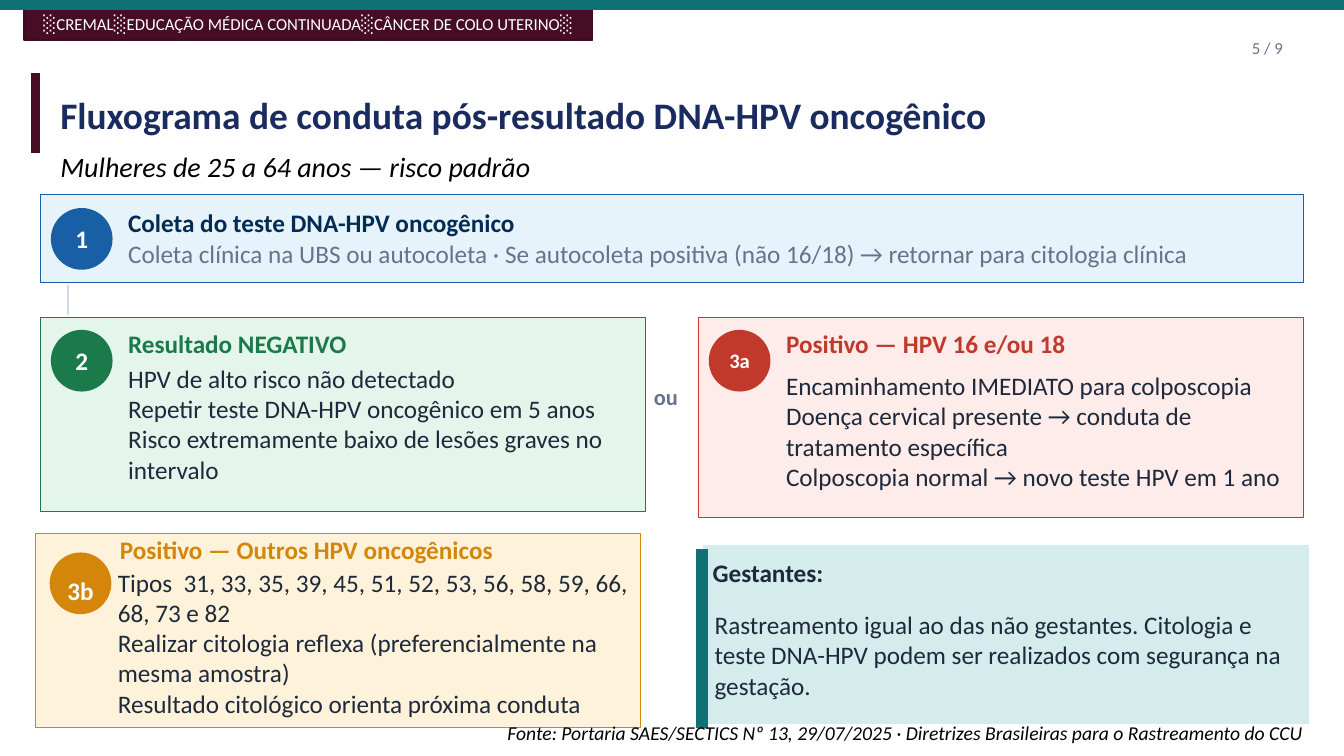
"""Build the slide with the management flowchart that follows an HPV DNA test."""
from dataclasses import dataclass

from lxml import etree
from pptx import Presentation
from pptx.dml.color import RGBColor
from pptx.enum.shapes import MSO_CONNECTOR, MSO_SHAPE
from pptx.enum.text import MSO_ANCHOR, PP_ALIGN
from pptx.oxml.ns import qn
from pptx.util import Cm, Pt


@dataclass(frozen=True)
class Theme:
    """Font, type sizes and colours of the slide."""
    font: str = "Calibri"
    title: float = 26.7
    subtitle: float = 20
    body: float = 18
    either: float = 16
    small_badge: float = 14.7
    source: float = 14
    small: float = 12
    white: str = "FFFFFF"
    black: str = "000000"
    ink: str = "1E293B"
    grey: str = "64748B"
    pale_grey: str = "D1D9E6"
    navy: str = "1A2B5F"
    deep_blue: str = "042C53"
    wine: str = "460D25"
    dark_wine: str = "3D0B20"
    teal: str = "0F7173"
    pale_teal: str = "D4ECEC"
    blue: str = "185FA5"
    pale_blue: str = "E6F3FB"
    green: str = "1A7A4A"
    pale_green: str = "E4F5EC"
    red: str = "C0392B"
    pale_red: str = "FDECEA"
    amber: str = "D4860A"
    pale_amber: str = "FEF3DA"


THEME = Theme()


@dataclass
class Step:
    """One numbered card; inner places are offsets from its top left corner."""
    label: str
    heading: str
    lines: list
    place: tuple
    colour: str
    fill: str
    body: tuple
    badge: tuple = (0.28, 0.33)
    head: tuple = (2.21, 0.2)
    heading_colour: str = ""
    body_colour: str = THEME.ink
    label_size: float = THEME.body
    label_drop: float = 0


STEPS = [
    Step("1", "Coleta do teste DNA-HPV oncogênico",
         ["Coleta clínica na UBS ou autocoleta · Se autocoleta positiva (não 16/18) "
          "→ retornar para citologia clínica"],
         (1.02, 4.9, 31.83, 2.21), THEME.blue, THEME.pale_blue, (2.21, 1.07, 28.78, 0.84),
         badge=(0.28, 0.36), head=(2.21, 0.26),
         heading_colour=THEME.deep_blue, body_colour=THEME.grey),
    Step("2", "Resultado NEGATIVO",
         ["HPV de alto risco não detectado",
          "Repetir teste DNA-HPV oncogênico em 5 anos",
          "Risco extremamente baixo de lesões graves no intervalo"],
         (1.02, 8, 15.24, 4.88), THEME.green, THEME.pale_green, (2.21, 1.86, 12.19, 1.63)),
    Step("3a", "Positivo — HPV 16 e/ou 18",
         ["Encaminhamento IMEDIATO para colposcopia",
          "Doença cervical presente → conduta de tratamento específica",
          "Colposcopia normal → novo teste HPV em 1 ano"],
         (17.6, 8, 15.24, 5.05), THEME.red, THEME.pale_red, (2.21, 1.63, 12.52, 2.46),
         label_size=THEME.small_badge),
    Step("3b", "Positivo — Outros HPV oncogênicos",
         ["Tipos  31, 33, 35, 39, 45, 51, 52, 53, 56, 58, 59, 66, 68, 73 e 82",
          "Realizar citologia reflexa (preferencialmente na mesma amostra)",
          "Resultado citológico orienta próxima conduta"],
         (0.89, 13.44, 15.24, 4.9), THEME.amber, THEME.pale_amber, (2.08, 1.03, 13.54, 3.45),
         badge=(0.38, 0.5), head=(2.13, -0.03), label_drop=0.36),
]


def write(shape, lines, size, colour, align=PP_ALIGN.LEFT, bold=False, italic=False):
    """Fill a shape with vertically centred paragraphs of one style."""
    frame = shape.text_frame
    frame.word_wrap = True
    frame.vertical_anchor = MSO_ANCHOR.MIDDLE
    frame.margin_left = frame.margin_top = frame.margin_right = frame.margin_bottom = 0
    for index, line in enumerate(lines):
        para = frame.add_paragraph() if index else frame.paragraphs[0]
        para.text = line
        para.alignment = align
        para.font.name = THEME.font
        para.font.size = Pt(size)
        para.font.bold = bold
        para.font.italic = italic
        para.font.color.rgb = RGBColor.from_string(colour)


def add_text(page, place, lines, size, colour, **style):
    """Add a text box with its paragraphs."""
    box = page.shapes.add_textbox(*map(Cm, place))
    write(box, lines, size, colour, **style)


def add_block(page, place, fill, line="", width=1, kind=MSO_SHAPE.RECTANGLE):
    """Add a filled, outlined shape without shadow."""
    block = page.shapes.add_shape(kind, *map(Cm, place))
    block.shadow.inherit = False
    block.fill.solid()
    block.fill.fore_color.rgb = RGBColor.from_string(fill)
    block.line.color.rgb = RGBColor.from_string(line or fill)
    block.line.width = Pt(width)
    return block


def add_rule(page, start, end, colour, width):
    """Add a straight line without shadow."""
    rule = page.shapes.add_connector(MSO_CONNECTOR.STRAIGHT, *map(Cm, start + end))
    rule.line.color.rgb = RGBColor.from_string(colour)
    rule.line.width = Pt(width)
    etree.SubElement(rule._element.spPr, qn("a:effectLst"))


def add_step(page, step):
    """Add a card with its round badge, heading and text."""
    left, top = step.place[:2]

    def inside(across, down, width, height):
        """Turn an offset within the card into a place on the slide."""
        return left + across, top + down, width, height

    add_block(page, step.place, step.fill, step.colour, 0.5)
    badge = add_block(page, inside(*step.badge, 1.52, 1.52), step.colour, kind=MSO_SHAPE.OVAL)
    write(badge, [step.label], step.label_size, THEME.white, PP_ALIGN.CENTER, bold=True)
    badge.text_frame.margin_top = Cm(step.label_drop)
    add_text(page, inside(*step.head, 12.52, 0.89), [step.heading], THEME.body,
             step.heading_colour or step.colour, bold=True)
    add_text(page, inside(*step.body), step.lines, THEME.body, step.body_colour)


def add_header(page):
    """Add the course tag, top band, page number, title and subtitle."""
    tag = add_block(page, (0.61, 0.2, 14.33, 0.81), THEME.wine, THEME.dark_wine)
    write(tag, ["░CREMAL░EDUCAÇÃO MÉDICA CONTINUADA░CÂNCER DE COLO UTERINO░"],
          THEME.small, THEME.white, PP_ALIGN.CENTER)
    add_rule(page, (0.89, 1.83), (0.89, 3.86), THEME.wine, 6)
    add_block(page, (0, 0, 33.87, 0.23), THEME.teal)
    add_text(page, (29.79, 0.74, 2.54, 0.94), ["5 / 9"], THEME.small, THEME.grey,
             align=PP_ALIGN.RIGHT)
    add_text(page, (1.52, 1.96, 30.81, 1.85),
             ["Fluxograma de conduta pós-resultado DNA-HPV oncogênico"],
             THEME.title, THEME.navy, bold=True)
    add_text(page, (1.52, 3.73, 20.32, 0.94), ["Mulheres de 25 a 64 anos — risco padrão"],
             THEME.subtitle, THEME.black, italic=True)


def add_pregnancy_note(page):
    """Add the note on pregnant women with its side bar."""
    add_block(page, (17.73, 13.74, 15.24, 4.5), THEME.pale_teal)
    add_block(page, (17.55, 13.84, 0.28, 4.5), THEME.teal)
    add_text(page, (17.96, 14.05, 14.55, 0.74), ["Gestantes:"], THEME.body, THEME.ink, bold=True)
    add_text(page, (18.01, 14.05, 14.55, 4.9),
             ["Rastreamento igual ao das não gestantes. Citologia e teste DNA-HPV "
              "podem ser realizados com segurança na gestação."], THEME.body, THEME.ink)


def main():
    """Build the deck and save it."""
    deck = Presentation()
    deck.slide_width, deck.slide_height = Cm(33.87), Cm(19.05)
    page = deck.slides.add_slide(deck.slide_layouts[6])
    add_header(page)
    for step in STEPS:
        add_step(page, step)
    add_block(page, (1.7, 7.19, 0.03, 0.74), THEME.pale_grey)
    add_text(page, (15.93, 9.14, 1.7, 1.7), ["ou"], THEME.either, THEME.grey,
             align=PP_ALIGN.CENTER, bold=True)
    add_pregnancy_note(page)
    add_text(page, (1.02, 18.11, 31.83, 0.69),
             ["Fonte: Portaria SAES/SECTICS Nº 13, 29/07/2025 · "
              "Diretrizes Brasileiras para o Rastreamento do CCU"],
             THEME.source, THEME.black, align=PP_ALIGN.RIGHT, italic=True)
    deck.save("out.pptx")


if __name__ == "__main__":
    main()
